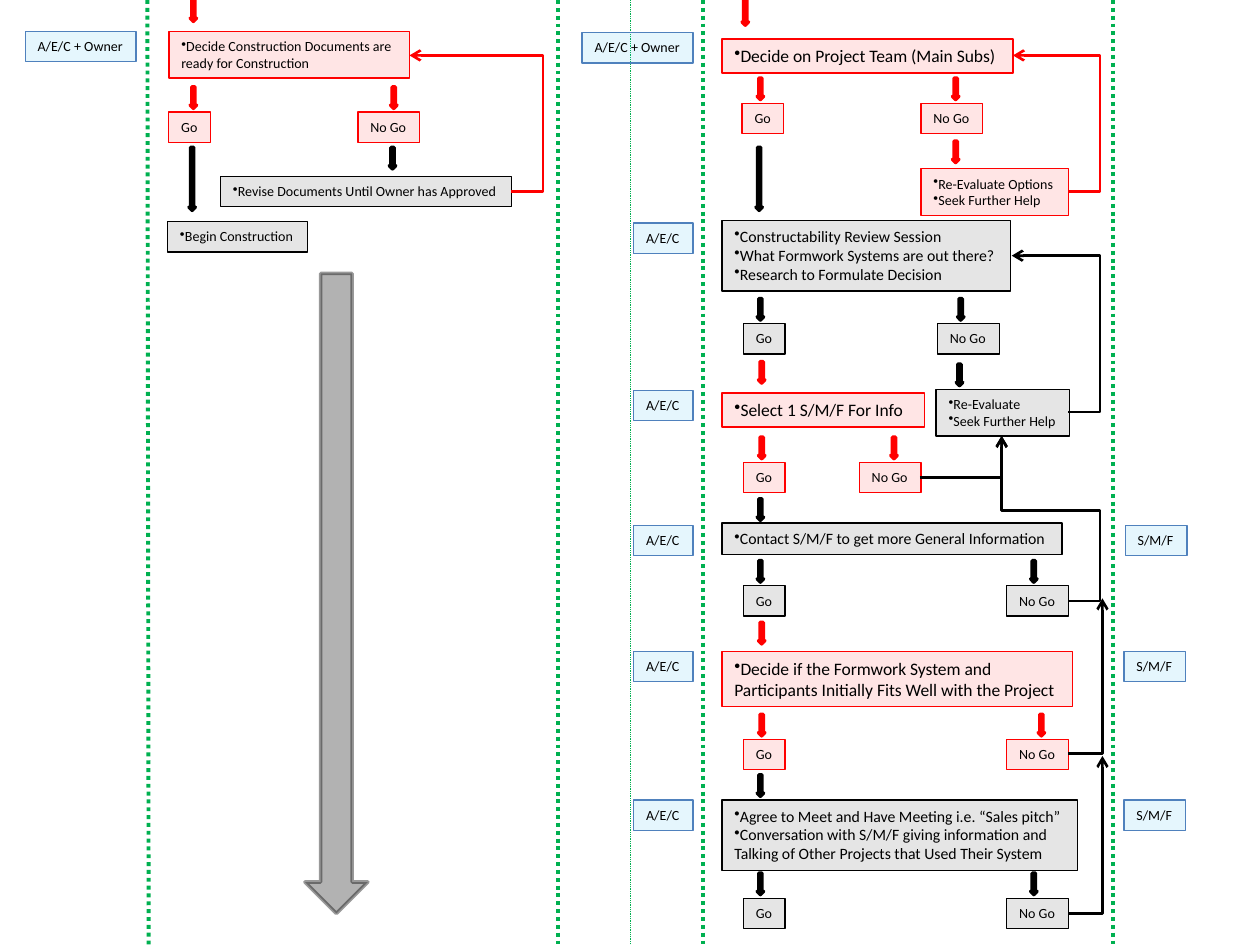
from lxml.etree import SubElement
from pptx import Presentation
from pptx.dml.color import RGBColor
from pptx.enum.dml import MSO_LINE
from pptx.enum.shapes import MSO_CONNECTOR as Link, MSO_SHAPE as Shape
from pptx.enum.text import MSO_AUTO_SIZE as AutoSize
from pptx.oxml.ns import qn
from pptx.util import Pt

PX = 9144  # 100 px to the inch
RED = RGBColor(0xFF, 0x00, 0x00)
BLACK = RGBColor(0x00, 0x00, 0x00)
GREEN = RGBColor(0x00, 0xB0, 0x50)
SKY = RGBColor(0x00, 0xB0, 0xF0)
BLUE = RGBColor(0x4F, 0x81, 0xBD)

prs = Presentation()
prs.slide_width, prs.slide_height = 1000 * PX, 750 * PX
slide = prs.slides.add_slide(prs.slide_layouts[6])
shapes = slide.shapes


def paint(fill, color, percent=100):
    """Fill with a solid colour of the given opacity."""
    fill.solid()
    fill.fore_color.rgb = color
    if percent < 100:
        rgb = fill._xPr.find(qn("a:solidFill"))[0]
        SubElement(rgb, qn("a:alpha"), val=str(percent * 1000))


def add_link(kind, start, end, color, width):
    """Add a connector without shadow between two points."""
    link = shapes.add_connector(kind, *[v * PX for v in (*start, *end)])
    link.line.color.rgb = color
    link.line.width = Pt(width)
    SubElement(link._element.spPr, qn("a:effectLst"))
    return link


# Dotted lane dividers
for top_x, bottom_x, width in [(443, 443, 2.25), (117, 118, 2.25), (558, 558, 2.25),
                               (883, 883, 2.25), (500, 500, 0.5)]:
    divider = add_link(Link.STRAIGHT, (top_x, 0), (bottom_x, 750), GREEN, width)
    divider.line.dash_style = MSO_LINE.ROUND_DOT

# Boxes: left, top, width, height, colour, size, lines of text
boxes = [
    # Construction documents
    (134, 25, 191, 37, RED, 8, ["•Decide Construction Documents are", "ready for Construction"]),
    (175, 140, 231, 24, BLACK, 8, ["•Revise Documents Until Owner has Approved"]),
    (133, 176, 111, 24, BLACK, 8, ["•Begin Construction"]),
    # Project team and formwork system
    (573, 31, 231, 27, RED, 10, ["•Decide on Project Team (Main Subs)"]),
    (731, 134, 117, 37, RED, 8, ["•Re-Evaluate Options", "•Seek Further Help"]),
    (573, 175, 229, 56, BLACK, 9, ["•Constructability Review Session",
                                   "•What Formwork Systems are out there?",
                                   "•Research to Formulate Decision"]),
    (743, 309, 106, 37, BLACK, 8, ["•Re-Evaluate", "•Seek Further Help"]),
    (573, 312, 161, 27, RED, 10, ["•Select 1 S/M/F For Info"]),
    (573, 415, 270, 25, BLACK, 9, ["•Contact S/M/F to get more General Information"]),
    (573, 517, 278, 44, RED, 10, ["•Decide if the Formwork System and",
                                  "Participants Initially Fits Well with the Project"]),
    (573, 635, 282, 56, BLACK, 9, ["•Agree to Meet and Have Meeting i.e. “Sales pitch”",
                                   "•Conversation with S/M/F giving information and",
                                   "Talking of Other Projects that Used Their System"]),
    # Owners and architects
    (20, 25, 88, 24, SKY, 8, ["A/E/C + Owner"]),
    (462, 26, 88, 24, SKY, 8, ["A/E/C + Owner"]),
]
boxes += [(503, y, 47, 24, SKY, 8, ["A/E/C"]) for y in (177, 310, 417, 517, 635)]
boxes += [(x, y, 49, 24, SKY, 8, ["S/M/F"]) for x, y in ((893, 417), (892, 517), (892, 635))]

# Block arrows outside the gates: left, top, height, colour
arrows = [
    (151, 0, 17, RED), (309, 117, 17, BLACK), (150, 117, 50, BLACK),
    (589, 0, 20, RED), (756, 112, 17, RED), (600, 117, 50, BLACK),
    (759, 289, 17, BLACK), (602, 287, 17, RED), (601, 396, 17, BLACK),
    (602, 494, 17, RED), (601, 615, 17, BLACK),
]

# Gates: top, colour, then box and arrow left for Go and for No Go
gates = [
    (89, RED, 134, 151, 284, 310),
    (82, RED, 589, 601, 731, 756),
    (257, BLACK, 590, 601, 744, 760),
    (367, RED, 590, 602, 682, 707),
    (465, BLACK, 590, 601, 799, 818),
    (587, RED, 590, 602, 799, 824),
    (713, BLACK, 590, 601, 799, 818),
]
for top, color, go, go_arrow, no_go, no_go_arrow in gates:
    boxes += [(go, top, 33, 24, color, 8, ["Go"]), (no_go, top, 49, 24, color, 8, ["No Go"])]
    arrows += [(x, top - 20, 17, color) for x in (go_arrow, no_go_arrow)]

for left, top, width, height, color, size, lines in boxes:
    box = shapes.add_textbox(left * PX, top * PX, width * PX, height * PX)
    paint(box.fill, color, 10)
    box.line.color.rgb = BLUE if color == SKY else color
    box.line.width = Pt(0.75)
    frame = box.text_frame
    frame.word_wrap = False
    frame.auto_size = AutoSize.SHAPE_TO_FIT_TEXT
    frame.text = "\n".join(line.lstrip("•") for line in lines)
    for paragraph, line in zip(frame.paragraphs, lines):
        if line.startswith("•"):
            SubElement(paragraph._p.get_or_add_pPr(), qn("a:buChar"), char="•")
        font = paragraph.runs[0].font
        font.name, font.size = "Calibri", Pt(size)
        font.color.rgb = BLACK

for left, top, height, color in arrows:
    arrow = shapes.add_shape(Shape.DOWN_ARROW, left * PX, top * PX, 5 * PX, height * PX)
    arrow.shadow.inherit = False
    paint(arrow.fill, color)
    arrow.line.color.rgb = color
    arrow.line.width = Pt(2)

# Long construction arrow
construction = shapes.add_shape(Shape.DOWN_ARROW, 242 * PX, 217 * PX, 50 * PX, 508 * PX)
construction.shadow.inherit = False
paint(construction.fill, BLACK, 30)
paint(construction.line.fill, BLACK, 40)
construction.line.width = Pt(2)

# Feedback loops: start, end, colour, and the bend's x and y where it has them
loops = [
    ((406, 152), (325, 44), RED, [431]),
    ((848, 152), (804, 44), RED, [873]),
    ((848, 327), (803, 203), BLACK, [873]),
    ((730, 379), (795, 346), BLACK, []),
    ((848, 477), (795, 346), BLACK, [873, 405]),
    ((848, 598), (875, 475), BLACK, []),
    ((848, 725), (875, 600), BLACK, []),
]
for start, end, color, bends in loops:
    loop = add_link(Link.ELBOW, start, end, color, 1.5)
    geometry = loop._element.spPr.find(qn("a:prstGeom"))
    geometry.set("prst", f"bentConnector{2 + len(bends)}")
    for i, bend in enumerate(bends):
        share = round((bend - start[i]) / (end[i] - start[i]) * 100000)
        SubElement(geometry.find(qn("a:avLst")), qn("a:gd"),
                   name=f"adj{i + 1}", fmla=f"val {share}")
    SubElement(loop.line._get_or_add_ln(), qn("a:tailEnd"), type="arrow")

prs.save("out.pptx")
